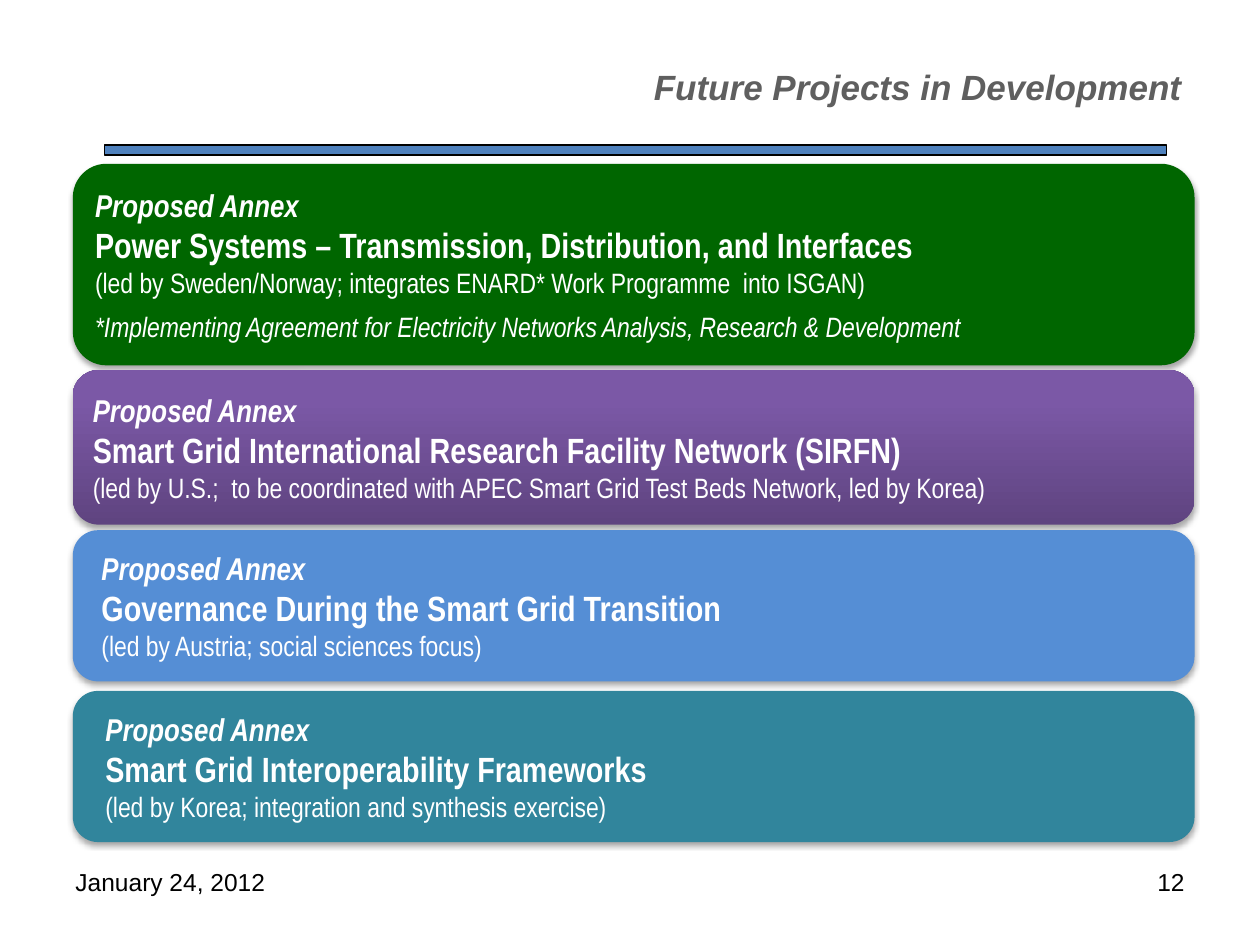
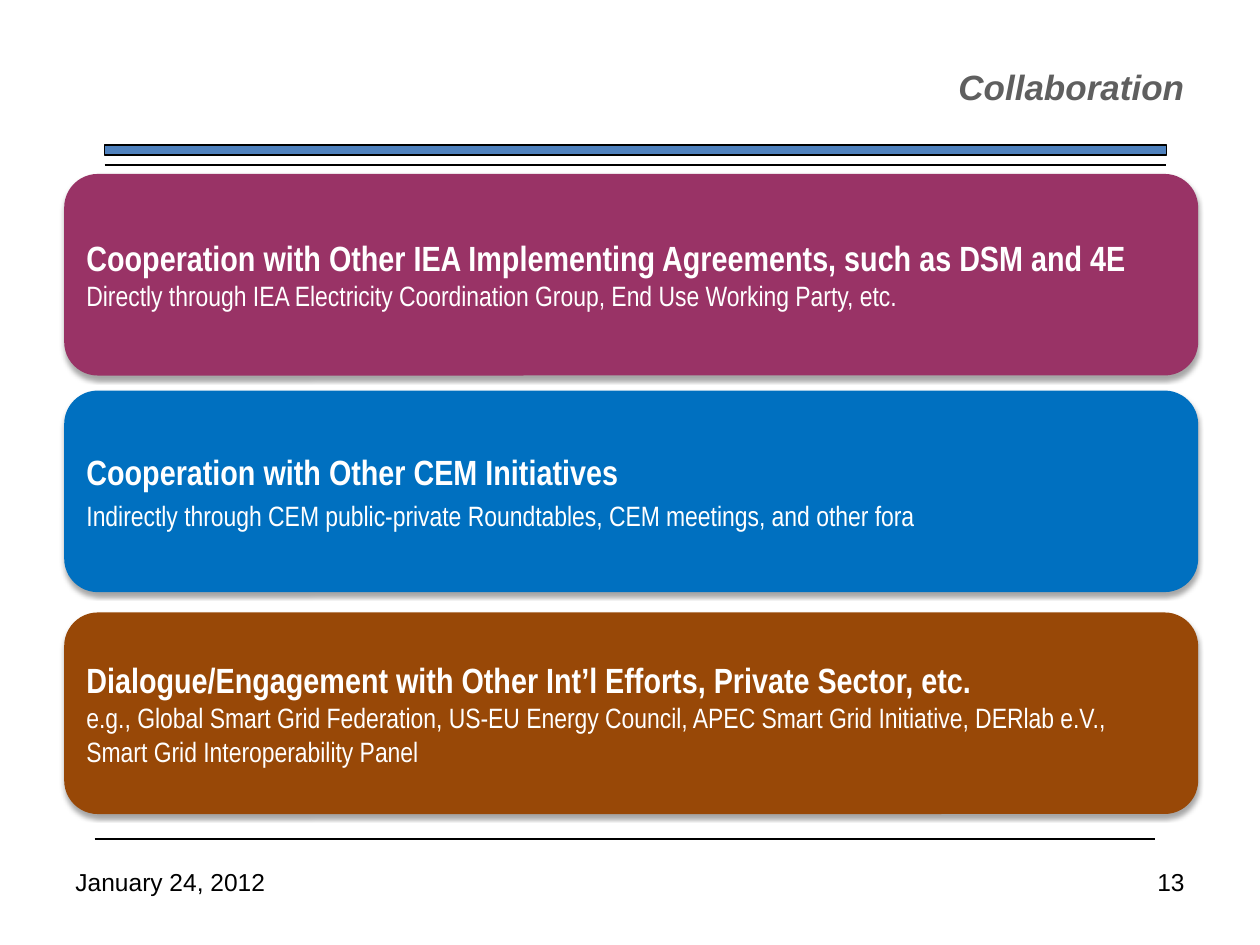
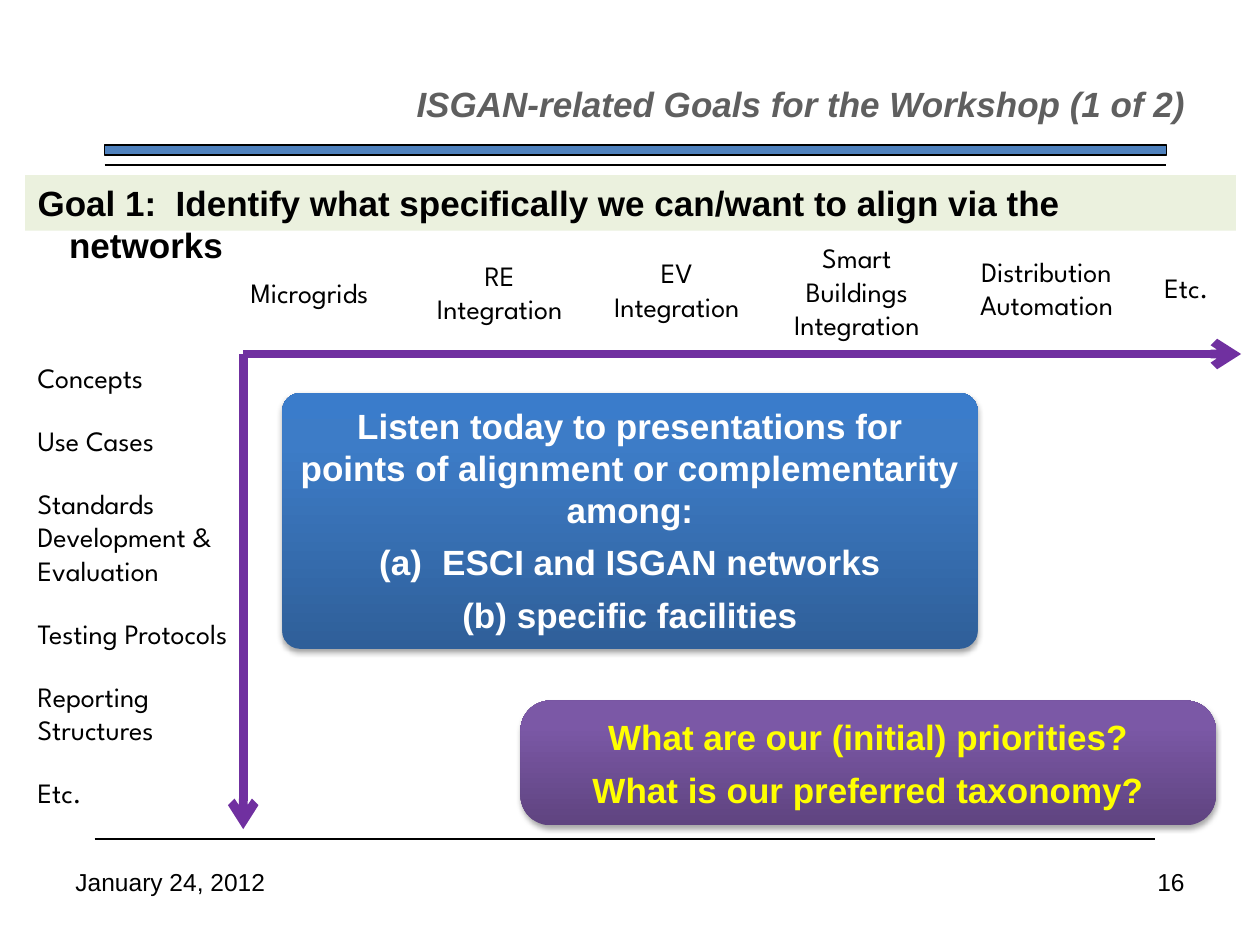
import dataclasses

import lxml.etree
import pptx
import pptx.dml.color
import pptx.enum.shapes
import pptx.enum.text
import pptx.oxml.ns
import pptx.util
from copy import deepcopy

Pt = pptx.util.Pt
qn = pptx.oxml.ns.qn
ALIGN = pptx.enum.text.PP_ALIGN
ANCHOR = pptx.enum.text.MSO_ANCHOR
SHAPE = pptx.enum.shapes.MSO_SHAPE


@dataclasses.dataclass(frozen=True)
class Style:
    size: float
    font: str
    colour: str
    bold: bool = False
    italic: bool = False


@dataclasses.dataclass(frozen=True)
class Theme:
    black: str = "000000"
    rule: str = "4F81BD"
    axis: str = "7030A0"
    goal: str = "EBF1DE"
    green: str = "006600"
    teal: str = "31859C"
    sky: str = "558ED5"
    plum: str = "993366"
    blue: str = "0070C0"
    brown: str = "984807"
    # Gradients run from bottom to top: (position, colour)
    purple_fade: tuple = ((0, "5F4480"), (0.8, "7B58A6"), (1, "7C57A8"))
    blue_fade: tuple = ((0, "2F5F99"), (0.8, "3D7CC7"), (1, "3A7CCB"))
    title: Style = Style(20, "Arial", "5F5F5F", True, True)
    footer: Style = Style(14, "Arial", "000000")
    kicker: Style = Style(18, "Arial Narrow", "FFFFFF", True, True)
    heading: Style = Style(20, "Arial Narrow", "FFFFFF", True)
    detail: Style = Style(16, "Arial Narrow", "FFFFFF")
    footnote: Style = Style(16, "Arial Narrow", "FFFFFF", False, True)
    goal_text: Style = Style(20, "Arial", "000000", True)
    callout: Style = Style(20, "Arial", "FFFFFF", True)
    question: Style = Style(20, "Arial", "FFFF00", True)
    label: Style = Style(16, "League Spartan", "000000")


THEME = Theme()


@dataclasses.dataclass(frozen=True)
class Box:
    left: float
    top: float
    width: float
    height: float

    def lengths(self):
        return [Pt(value) for value in dataclasses.astuple(self)]


@dataclasses.dataclass(frozen=True)
class Line:
    text: str
    style: Style
    before: float = 0
    hanging: float = 0
    numbering: str = ""


def rgb(colour):
    return pptx.dml.color.RGBColor.from_string(colour)


def write(frame, lines, align=ALIGN.LEFT, anchor=ANCHOR.TOP):
    frame.word_wrap = True
    frame.auto_size = pptx.enum.text.MSO_AUTO_SIZE.NONE
    frame.vertical_anchor = anchor
    for index, line in enumerate(lines):
        para = frame.paragraphs[0] if index == 0 else frame.add_paragraph()
        para.text = line.text
        para.alignment = align
        if line.before:
            para.space_before = Pt(line.before)
        properties = para._p.get_or_add_pPr()
        if line.hanging:
            properties.set("marL", str(Pt(line.hanging)))
            properties.set("indent", str(-Pt(line.hanging)))
        if line.numbering:
            lxml.etree.SubElement(properties, qn("a:buAutoNum"), type=line.numbering)
        font = para.font
        font.name, font.size = line.style.font, Pt(line.style.size)
        font.bold, font.italic = line.style.bold, line.style.italic
        font.color.rgb = rgb(line.style.colour)


def add_text(page, box, lines, align=ALIGN.LEFT):
    write(page.shapes.add_textbox(*box.lengths()).text_frame, lines, align)


def add_line(page, start, end, colour, width, arrow=False):
    ends = [Pt(value) for value in (*start, *end)]
    line = page.shapes.add_connector(pptx.enum.shapes.MSO_CONNECTOR.STRAIGHT, *ends)
    line.line.color.rgb = rgb(colour)
    line.line.width = Pt(width)
    if arrow:
        lxml.etree.SubElement(line.line._get_or_add_ln(), qn("a:tailEnd"), type="arrow")
    lxml.etree.SubElement(line._element.spPr, qn("a:effectLst"))


def add_rectangle(page, box, fill, outlined=False):
    shape = page.shapes.add_shape(SHAPE.RECTANGLE, *box.lengths())
    shape.shadow.inherit = False
    shape.fill.solid()
    shape.fill.fore_color.rgb = rgb(fill)
    if outlined:
        shape.line.color.rgb = rgb(THEME.black)
        shape.line.width = Pt(0.75)
    else:
        shape.line.fill.background()
    return shape


def fill_fade(shape, stops):
    shape.fill.gradient()
    shape.fill.gradient_angle = 90
    stop_list = shape._element.spPr.find(".//" + qn("a:gsLst"))
    while len(stop_list) < len(stops):
        stop_list.append(deepcopy(stop_list[0]))
    for stop, (position, colour) in zip(shape.fill.gradient_stops, stops):
        stop.position = position
        stop.color.rgb = rgb(colour)


def drop_shadow(shape):
    shape.shadow.inherit = False
    effects = shape._element.spPr.find(qn("a:effectLst"))
    shadow = lxml.etree.SubElement(
        effects, qn("a:outerShdw"), blurRad=str(Pt(3.1)), dist=str(Pt(1.8)),
        dir="5400000", rotWithShape="0")
    colour = lxml.etree.SubElement(shadow, qn("a:srgbClr"), val=THEME.black)
    lxml.etree.SubElement(colour, qn("a:alpha"), val="35000")


def add_card(page, box, fill, lines, inset=7.2, corner=None,
             align=ALIGN.LEFT, anchor=ANCHOR.MIDDLE):
    """Add a rounded, shadowed panel; fill is a colour or a tuple of stops."""
    card = page.shapes.add_shape(SHAPE.ROUNDED_RECTANGLE, *box.lengths())
    if corner is not None:
        card.adjustments[0] = corner
    if isinstance(fill, str):
        card.fill.solid()
        card.fill.fore_color.rgb = rgb(fill)
    else:
        fill_fade(card, fill)
    card.line.fill.background()
    drop_shadow(card)
    frame = card.text_frame
    frame.margin_left = frame.margin_right = Pt(inset)
    frame.margin_top = frame.margin_bottom = Pt(3.6)
    write(frame, lines, align, anchor)


def start_page(deck, title, title_box, number, bottom_rule=True):
    page = deck.slides.add_slide(deck.slide_layouts[5])
    add_line(page, (59.8, 94.3), (666, 94.3), THEME.black, 0.75)
    add_rectangle(page, Box(59.8, 82.8, 606.7, 5.8), THEME.rule, outlined=True)
    if bottom_rule:
        add_line(page, (54, 479.5), (660.2, 479.5), THEME.black, 0.75)
    heading = page.shapes.title
    heading.left, heading.top, heading.width, heading.height = title_box.lengths()
    write(heading.text_frame, [Line(title, THEME.title)], ALIGN.RIGHT, ANCHOR.MIDDLE)
    for text, left, align in (("January 24, 2012", 36, ALIGN.LEFT),
                              (number, 516, ALIGN.RIGHT)):
        add_text(page, Box(left, 492, 168, 37.4), [Line(text, THEME.footer)], align)
    return page


def build_projects(deck):
    page = start_page(deck, "Future Projects in Development",
                      Box(161.3, 21.6, 521.3, 55.4), "12", bottom_rule=False)
    enard = Line("*Implementing Agreement for Electricity Networks Analysis, "
                 "Research & Development", THEME.footnote, before=6)
    annexes = (
        (93.6, 115.2, THEME.green, 7.2,
         "Power Systems – Transmission, Distribution, and Interfaces",
         "(led by Sweden/Norway; integrates ENARD* Work Programme  into ISGAN)", [enard]),
        (211.5, 88.3, THEME.purple_fade, 7.2,
         "Smart Grid International Research Facility Network (SIRFN)",
         "(led by U.S.;  to be coordinated with APEC Smart Grid Test Beds Network, "
         "led by Korea)", []),
        (303, 86.4, THEME.sky, 12.2,
         "Governance During the Smart Grid Transition",
         "(led by Austria; social sciences focus)", []),
        (394.8, 86.4, THEME.teal, 14.4,
         "Smart Grid Interoperability Frameworks",
         "(led by Korea; integration and synthesis exercise)", []),
    )
    for top, height, fill, inset, name, detail, notes in annexes:
        lines = [Line("Proposed Annex", THEME.kicker), Line(name, THEME.heading),
                 Line(detail, THEME.detail), *notes]
        add_card(page, Box(41.6, top, 641, height), fill, lines, inset)


def build_collaboration(deck):
    page = start_page(deck, "Collaboration", Box(161.3, 21.6, 522.7, 55.4), "13")
    efforts = (
        (99.4, THEME.plum, 0,
         "Cooperation with Other IEA Implementing Agreements, such as DSM and 4E",
         "Directly through IEA Electricity Coordination Group, End Use Working Party, etc."),
        (223.2, THEME.blue, 3.6,
         "Cooperation with Other CEM Initiatives",
         "Indirectly through CEM public-private Roundtables, CEM meetings, and other fora"),
        (350, THEME.brown, 0,
         "Dialogue/Engagement with Other Int’l Efforts, Private Sector, etc.",
         "e.g., Global Smart Grid Federation, US-EU Energy Council, "
         "APEC Smart Grid Initiative, DERlab e.V.,\vSmart Grid Interoperability Panel"),
    )
    for top, fill, before, name, detail in efforts:
        lines = [Line(name, THEME.heading), Line(detail, THEME.detail, before)]
        add_card(page, Box(36.7, top, 648, 115.2), fill, lines)


def add_matrix(page, box):
    """Draw two arrows from the top left corner of the box, with their labels."""
    origin = (box.left, box.top)
    add_line(page, origin, (box.left, box.top + box.height), THEME.axis, 5, arrow=True)
    add_line(page, origin, (box.left + box.width, box.top), THEME.axis, 5, arrow=True)
    topics = ("Concepts", "Use Cases", "Standards\vDevelopment & Evaluation",
              "Testing Protocols", "Reporting Structures", "Etc.")
    rows = [Line(topic, THEME.label, 16.8 if index else 0)
            for index, topic in enumerate(topics)]
    add_text(page, Box(box.left - 124.6, box.top, 124.6, 285.8), rows)
    # Label, offset from the corner, height above the axis, width, alignment
    columns = (
        ("Microgrids", -2.9, 48.2, 101.5, ALIGN.LEFT),
        ("RE\vIntegration", 87.1, 58.3, 118.8, ALIGN.CENTER),
        ("EV Integration", 196.6, 59.8, 102.2, ALIGN.CENTER),
        ("Smart Buildings Integration", 299.5, 68.4, 102.2, ALIGN.CENTER),
        ("Distribution Automation", 399.6, 60.5, 118.8, ALIGN.CENTER),
        ("Etc.", 475.9, 51.1, 126, ALIGN.CENTER),
    )
    for text, offset, rise, width, align in columns:
        place = Box(box.left + offset, box.top - rise, width, rise - 2)
        add_text(page, place, [Line(text, THEME.label)], align)


def build_goals(deck):
    page = start_page(deck, "ISGAN-related Goals for the Workshop (1 of 2)",
                      Box(228.2, 43.2, 456.5, 31.7), "16")
    goal = add_rectangle(page, Box(14.4, 100.1, 691.9, 31.7), THEME.goal)
    goal.text_frame.margin_right = Pt(14)
    write(goal.text_frame, [Line(
        "Goal 1:  Identify what specifically we can/want to align via the networks",
        THEME.goal_text, hanging=18)])
    add_matrix(page, Box(139, 202.3, 570.2, 271.5))
    add_card(page, Box(161.3, 224.6, 397.4, 146.2), THEME.blue_fade, [
        Line("Listen today to presentations for\v"
             "points of alignment or complementarity among:", THEME.callout),
        Line("ESCI and ISGAN networks", THEME.callout, 6, 36, "alphaLcParenBoth"),
        Line("(b) specific facilities", THEME.callout, 6),
    ], corner=0.07, align=ALIGN.CENTER, anchor=ANCHOR.TOP)
    add_card(page, Box(297.4, 400.3, 397.4, 71.3), THEME.purple_fade, [
        Line("What are our (initial) priorities?", THEME.question),
        Line("What is our preferred taxonomy?", THEME.question, 6),
    ], corner=0.24, align=ALIGN.CENTER, anchor=ANCHOR.TOP)


def main():
    deck = pptx.Presentation()
    deck.slide_width, deck.slide_height = Pt(720), Pt(540)
    build_projects(deck)
    build_collaboration(deck)
    build_goals(deck)
    deck.save("out.pptx")


if __name__ == "__main__":
    main()
